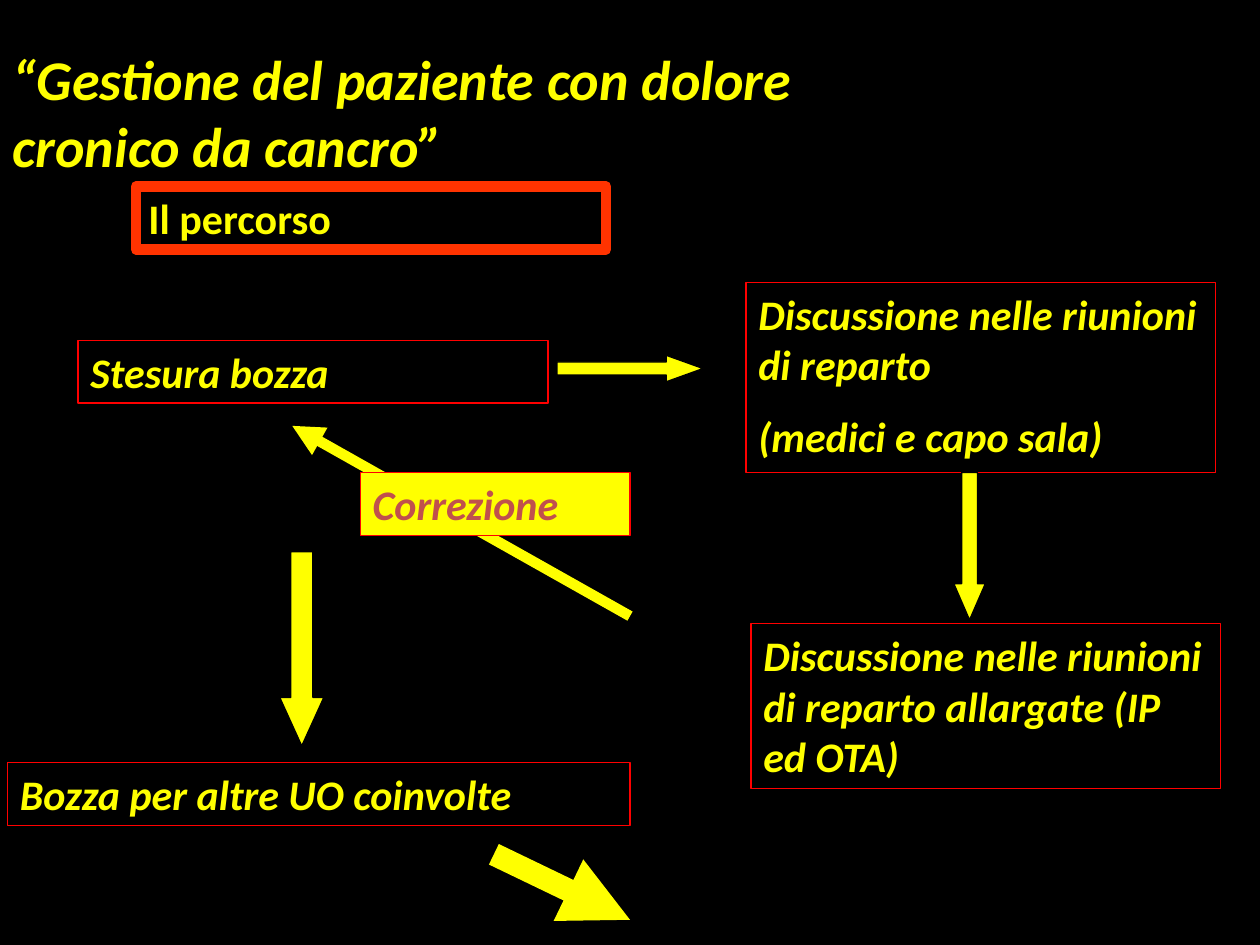
from lxml.etree import SubElement
from pptx import Presentation
from pptx.dml.color import RGBColor
from pptx.enum.shapes import MSO_CONNECTOR, MSO_SHAPE
from pptx.enum.text import MSO_ANCHOR, MSO_AUTO_SIZE, PP_ALIGN
from pptx.oxml.ns import qn
from pptx.util import Inches, Pt

BLACK = RGBColor(0x00, 0x00, 0x00)
YELLOW = RGBColor(0xFF, 0xFF, 0x00)
RED = RGBColor(0xFF, 0x00, 0x00)
ORANGE = RGBColor(0xFF, 0x33, 0x00)
BRICK = RGBColor(0xC0, 0x50, 0x4D)


class FlowSlide:
    """Draws the elements of a flow diagram on one slide in a shared style."""

    font_name = "Calibri"
    box_width = 3.73
    row_height = 0.5

    def __init__(self, presentation):
        self.slide = presentation.slides.add_slide(presentation.slide_layouts[5])
        background = self.slide.background.fill
        background.solid()
        background.fore_color.rgb = BLACK

    def add_text(self, shape, lines, size, color=YELLOW, italic=True, gap=0, wrap=True):
        frame = shape.text_frame
        frame.word_wrap = wrap
        frame.auto_size = MSO_AUTO_SIZE.NONE
        frame.vertical_anchor = MSO_ANCHOR.TOP
        for index, line in enumerate(lines):
            paragraph = frame.add_paragraph() if index else frame.paragraphs[0]
            paragraph.alignment = PP_ALIGN.LEFT
            paragraph.space_before = Pt(gap if index else 0)
            run = paragraph.add_run()
            run.text = line
            font = run.font
            font.name, font.size = self.font_name, Pt(size)
            font.bold, font.italic = True, italic
            font.color.rgb = color

    def title(self, lines, left, top, width, height):
        shape = self.slide.shapes.title
        shape.left, shape.top = Inches(left), Inches(top)
        shape.width, shape.height = Inches(width), Inches(height)
        self.add_text(shape, lines, 32, wrap=False)

    def shape(self, kind, left, top, width, height, fill, line, line_width=0.75):
        shape = self.slide.shapes.add_shape(
            kind, Inches(left), Inches(top), Inches(width), Inches(height))
        shape.shadow.inherit = False
        if fill is None:
            shape.fill.background()
        else:
            shape.fill.solid()
            shape.fill.fore_color.rgb = fill
        shape.line.color.rgb = line
        shape.line.width = Pt(line_width)
        return shape

    def box(self, lines, left, top, width=box_width, height=row_height, fill=None,
            line=RED, line_width=0.75, color=YELLOW, italic=True):
        shape = self.shape(MSO_SHAPE.RECTANGLE, left, top, width, height,
                           fill, line, line_width)
        self.add_text(shape, lines, 24, color, italic, gap=12)

    def block_arrow(self, kind, left, top, width, height, head):
        shape = self.shape(kind, left, top, width, height, YELLOW, BLACK)
        shape.adjustments[0] = 0.5
        shape.adjustments[1] = head

    def line_arrow(self, start, end, width):
        connector = self.slide.shapes.add_connector(
            MSO_CONNECTOR.STRAIGHT, *map(Inches, start + end))
        connector.line.color.rgb = YELLOW
        connector.line.width = Pt(width)
        properties = connector._element.spPr
        SubElement(properties.find(qn("a:ln")), qn("a:tailEnd"), type="triangle")
        SubElement(properties, qn("a:effectLst"))


def main():
    presentation = Presentation()
    presentation.slide_width, presentation.slide_height = Inches(10), Inches(7.5)
    flow = FlowSlide(presentation)
    flow.title(["“Gestione del paziente con dolore", "cronico da cancro”"],
               0, 0.3, 6.45, 1.18)
    flow.box(["Il percorso"], 1.08, 1.48, line=ORANGE, line_width=6, italic=False)
    flow.box(["Stesura bozza"], 0.62, 2.7)
    flow.block_arrow(MSO_SHAPE.RIGHT_ARROW, 4.42, 2.82, 1.16, 0.21, 1.39)
    flow.box(["Discussione nelle riunioni di reparto", "(medici e capo sala)"],
             5.92, 2.24, height=1.51)
    flow.block_arrow(MSO_SHAPE.DOWN_ARROW, 7.57, 3.75, 0.25, 1.17, 1.15)
    flow.box(["Discussione nelle riunioni di reparto allargate (IP ed OTA)"],
             5.96, 4.95, height=1.31)
    flow.line_arrow((5, 4.89), (2.32, 3.38), 6)
    flow.box(["Correzione"], 2.86, 3.75, width=2.14, fill=YELLOW, color=BRICK)
    flow.block_arrow(MSO_SHAPE.DOWN_ARROW, 2.22, 4.38, 0.35, 1.54, 1.1)
    flow.box(["Bozza per altre UO coinvolte"], 0.06, 6.05, width=4.94)
    flow.line_arrow((3.92, 6.78), (5, 7.3), 13)
    presentation.save("out.pptx")


if __name__ == "__main__":
    main()
